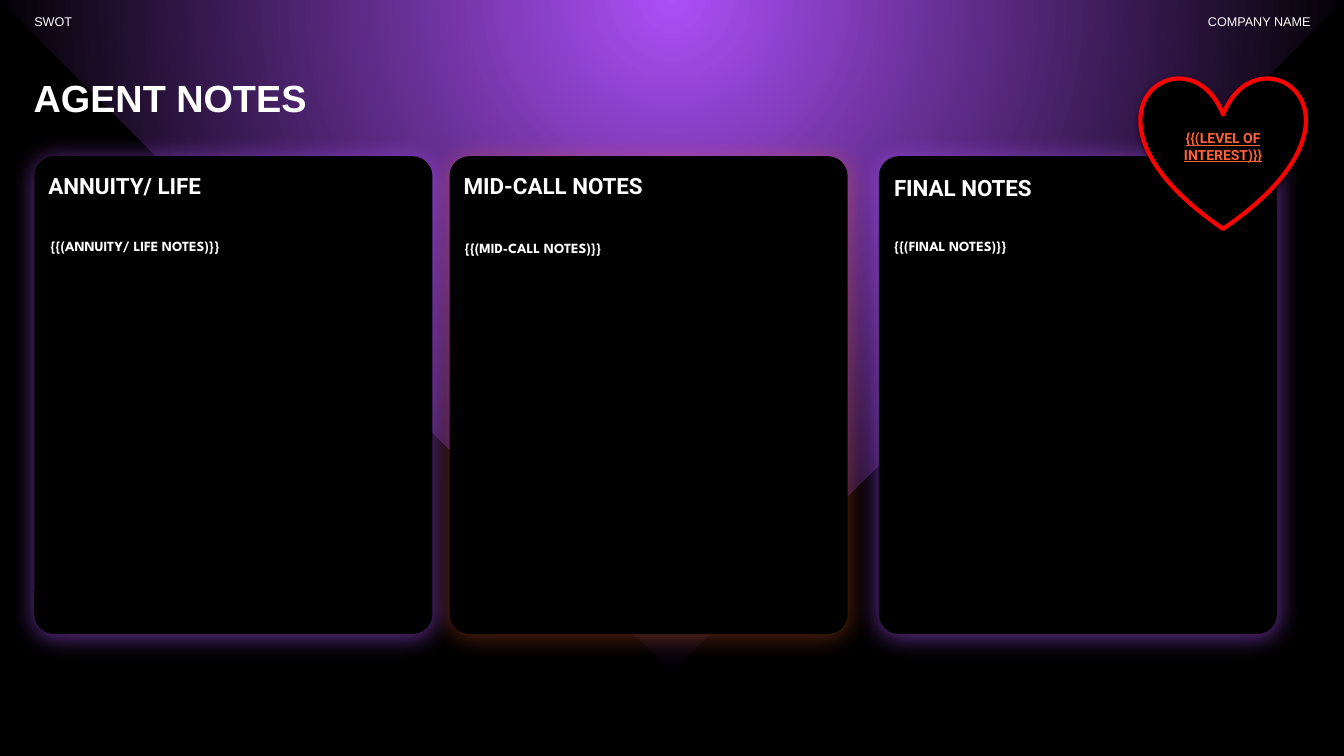
from dataclasses import dataclass

from lxml.etree import SubElement
from pptx import Presentation
from pptx.dml.color import RGBColor
from pptx.enum.shapes import MSO_SHAPE
from pptx.enum.text import MSO_ANCHOR, MSO_AUTO_SIZE, PP_ALIGN
from pptx.oxml.ns import qn
from pptx.util import Pt


@dataclass(frozen=True)
class Theme:
    black: str = "000000"
    white: str = "FFFFFF"
    violet: str = "AB4FF6"
    orange: str = "FF6234"
    red: str = "FF0000"
    sans: str = "Arial"
    head: str = "Roboto"
    body: str = "League Spartan"
    small: float = 9
    note: float = 10
    sub: float = 16
    title: float = 27


THEME = Theme()
WIDE, HIGH = 960, 540
TITLE = "AGENT NOTES"
LABELS = [
    ("SWOT", 24.5, PP_ALIGN.LEFT),
    ("COMPANY NAME", 673.2, PP_ALIGN.RIGHT),
]
CARDS = [
    dict(head="MID-CALL NOTES", note="{{(MID-CALL NOTES)}}", left=321.1,
         glow=(THEME.orange, 40), head_at=(331.2, 124.6), note_at=(331.9, 171.4)),
    dict(head="ANNUITY/ LIFE", note="{{(ANNUITY/ LIFE NOTES)}}", left=24.5,
         glow=(THEME.violet, 65), head_at=(34.6, 124.6), note_at=(36, 169.9)),
    dict(head="FINAL NOTES", note="{{(FINAL NOTES)}}", left=627.8,
         glow=(THEME.violet, 65), head_at=(638.6, 126), note_at=(638.6, 169.9)),
]
HEART = "{{(LEVEL OF INTEREST)}}"


def rgb(code):
    return RGBColor.from_string(code)


def tint(node, code, alpha=100):
    color = SubElement(node, qn("a:srgbClr"), val=code)
    if alpha < 100:
        SubElement(color, qn("a:alpha"), val=str(alpha * 1000))


def shade(node, code, alpha, blur, dist):
    glow = SubElement(node, qn("a:outerShdw"), blurRad=str(Pt(blur)),
                      dist=str(Pt(dist)), dir="5400000", algn="t", rotWithShape="0")
    tint(glow, code, alpha)


def place(shape, left, top, width, height):
    shape.left, shape.top = Pt(left), Pt(top)
    shape.width, shape.height = Pt(width), Pt(height)


def write(shape, text, font, size, color=THEME.white, bold=True, align=PP_ALIGN.LEFT,
          anchor=MSO_ANCHOR.TOP, inset=0, space=1.0):
    frame = shape.text_frame
    frame.word_wrap = True
    frame.auto_size = MSO_AUTO_SIZE.NONE
    frame.vertical_anchor = anchor
    frame.margin_left = frame.margin_right = Pt(inset)
    frame.margin_top = frame.margin_bottom = Pt(inset)
    para = frame.paragraphs[0]
    para.alignment = align
    para.line_spacing = space
    para.space_before = Pt(0)
    run = para.add_run()
    run.text = text
    run.font.name = font
    run.font.size = Pt(size)
    run.font.bold = bold
    run.font.color.rgb = rgb(color)
    return run


def block(slide, kind, area, color=THEME.black):
    shape = slide.shapes.add_shape(kind, *map(Pt, area))
    shape.fill.solid()
    shape.fill.fore_color.rgb = rgb(color)
    shape.line.fill.background()
    shape.shadow.inherit = False
    return shape


def cast(shape, *glow):
    shade(shape.element.spPr.find(qn("a:effectLst")), *glow)


def label(slide, area, *args, **style):
    box = slide.shapes.add_textbox(*map(Pt, area))
    write(box, *args, **style)


def beam(slide):
    side = 679
    shape = block(slide, MSO_SHAPE.RIGHT_TRIANGLE,
                  ((WIDE - side) / 2, -side / 2, side, side))
    shape.rotation = 315
    shape.fill.gradient()
    grad = shape.element.spPr.find(qn("a:gradFill"))
    for child in list(grad):
        grad.remove(child)
    stops = SubElement(grad, qn("a:gsLst"))
    for spot, color in [(0, THEME.violet), (72, THEME.black), (100, THEME.black)]:
        tint(SubElement(stops, qn("a:gs"), pos=str(spot * 1000)), color)
    ring = SubElement(grad, qn("a:path"), path="circle")
    SubElement(ring, qn("a:fillToRect"), {edge: "50000" for edge in "ltrb"})


def main():
    deck = Presentation()
    deck.slide_width, deck.slide_height = Pt(WIDE), Pt(HIGH)
    slide = deck.slides.add_slide(deck.slide_layouts[5])
    slide.background.fill.solid()
    slide.background.fill.fore_color.rgb = rgb(THEME.black)
    beam(slide)

    for card in CARDS:
        panel = block(slide, MSO_SHAPE.ROUNDED_RECTANGLE, (card["left"], 111.6, 284.4, 341.3))
        panel.adjustments[0] = 0.05
        cast(panel, *card["glow"], 18, 2)

    for text, left, align in LABELS:
        label(slide, (left, 6.5, 262.8, 18), text, THEME.sans, THEME.small,
              bold=False, align=align, anchor=MSO_ANCHOR.MIDDLE)

    title = slide.shapes.title
    place(title, 24, 48.2, 437, 49)
    run = write(title, TITLE, THEME.sans, THEME.title, space=1.15)
    effect = SubElement(run.font._element, qn("a:effectLst"))
    run.font._element.find(qn("a:solidFill")).addnext(effect)
    shade(effect, THEME.black, 50, 4.5, 1.5)
    slide.shapes.element.append(title.element)

    for card in CARDS:
        label(slide, (*card["head_at"], 176.4, 45.4), card["head"],
              THEME.head, THEME.sub, space=0.95)
        label(slide, (*card["note_at"], 262.8, 272.2), card["note"],
              THEME.body, THEME.note)

    heart = block(slide, MSO_SHAPE.HEART, (815, 54.7, 117.4, 108.7))
    heart.line.color.rgb = rgb(THEME.red)
    heart.line.width = Pt(3)
    cast(heart, THEME.black, 50, 4.5, 1.5)
    run = write(heart, HEART, THEME.head, THEME.note, THEME.orange,
                align=PP_ALIGN.CENTER, anchor=MSO_ANCHOR.MIDDLE, inset=7.2)
    run.font.underline = True
    deck.save("out.pptx")


if __name__ == "__main__":
    main()
